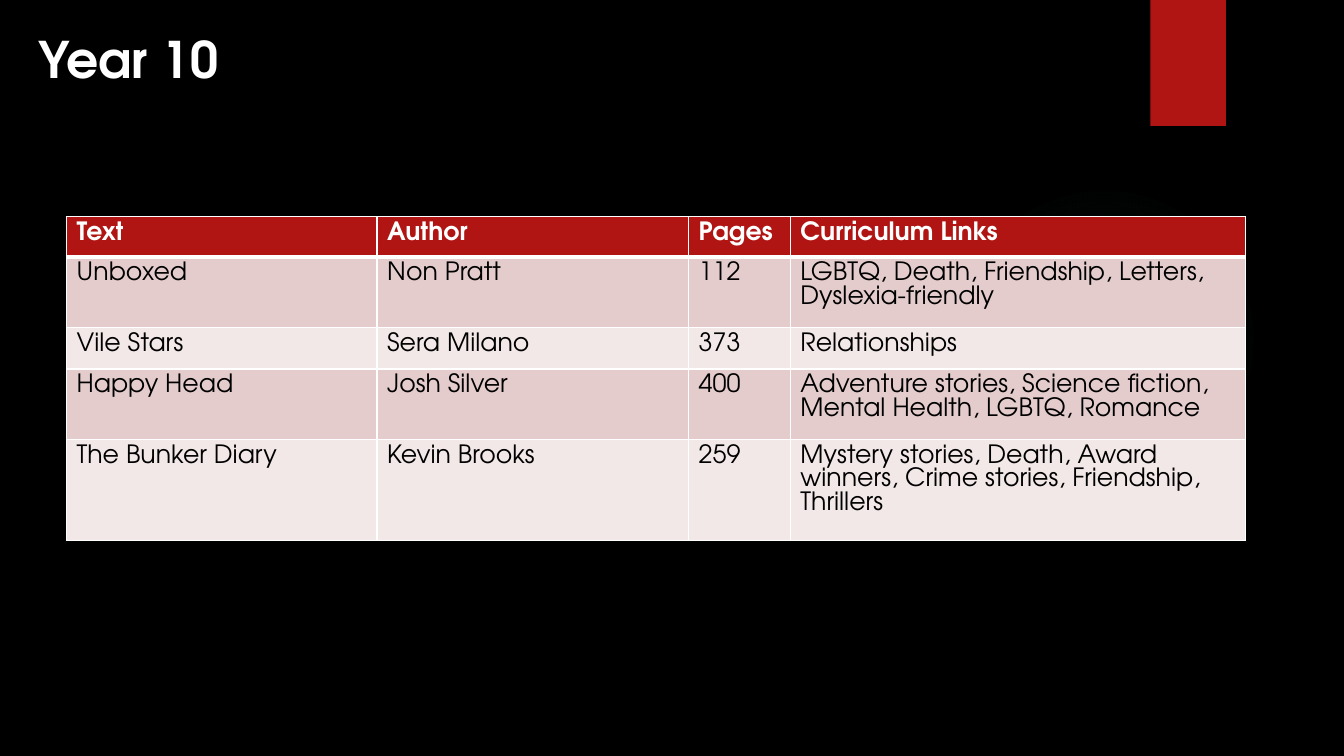
from lxml import etree
from pptx import Presentation
from pptx.dml.color import RGBColor
from pptx.enum import shapes, text
from pptx.oxml import ns
from pptx.util import Inches, Pt

BLACK = RGBColor(0x00, 0x00, 0x00)
WHITE = RGBColor(0xFF, 0xFF, 0xFF)
RED = RGBColor(0xB0, 0x15, 0x13)
ROSE = RGBColor(0xE4, 0xCC, 0xCC)
PALE = RGBColor(0xF2, 0xE8, 0xE7)
TEAL = RGBColor(0x50, 0xB9, 0xC1)
FONT = "TeX Gyre Adventor"

COL_WIDTHS = [3.08, 3.09, 1.01, 4.51]
ROW_HEIGHTS = [0.4, 0.7, 0.41, 0.7, 1.0]
BOOKS = [
    ("Text", "Author", "Pages", "Curriculum Links"),
    ("Unboxed", "Non Pratt", "112",
     "LGBTQ, Death, Friendship, Letters, Dyslexia-friendly"),
    ("Vile Stars", "Sera Milano", "373", "Relationships"),
    ("Happy Head", "Josh Silver", "400",
     "Adventure stories, Science fiction, Mental Health, LGBTQ, Romance"),
    ("The Bunker Diary", "Kevin Brooks", "259",
     "Mystery stories, Death, Award winners, Crime stories, Friendship, Thrillers"),
]


def add_run(p, words, size, color, bold):
    """Add one formatted run to a paragraph."""
    r = p.add_run()
    r.text = words
    r.font.name = FONT
    r.font.size = Pt(size)
    r.font.bold = bold
    r.font.color.rgb = color


def add_block(s, kind, x, y, w, h, color):
    """Add a filled preset shape without outline or shadow."""
    sp = s.shapes.add_shape(kind, Inches(x), Inches(y), Inches(w), Inches(h))
    sp.shadow.inherit = False
    sp.fill.solid()
    sp.fill.fore_color.rgb = color
    sp.line.fill.background()
    return sp


def add_glow(s, x, y, size):
    """Add a circle that fades out from a faint teal centre."""
    sp = add_block(s, shapes.MSO_SHAPE.OVAL, x, y, size, size, TEAL)
    stops = "".join(
        f'<a:gs pos="{pos}000"><a:srgbClr val="{TEAL}">'
        f'<a:alpha val="{alpha}000"/></a:srgbClr></a:gs>'
        for pos, alpha in [(0, 7), (36, 6), (69, 0), (100, 0)])
    grad = etree.fromstring(
        f'<a:gradFill {ns.nsdecls("a")}><a:gsLst>{stops}</a:gsLst>'
        '<a:path path="circle"><a:fillToRect l="50000" t="50000" '
        'r="50000" b="50000"/></a:path></a:gradFill>')
    solid = sp._element.spPr.find(ns.qn("a:solidFill"))
    solid.getparent().replace(solid, grad)


def add_title(s, words):
    """Add the slide heading."""
    box = s.shapes.add_textbox(Inches(0.28), Inches(0.23), Inches(5.51), Inches(0.71))
    tf = box.text_frame
    tf.word_wrap = True
    tf.auto_size = text.MSO_AUTO_SIZE.SHAPE_TO_FIT_TEXT
    add_run(tf.paragraphs[0], words, 36, WHITE, True)


def set_border(cell, side, width):
    """Draw one white border of a cell."""
    tc_pr = cell._tc.get_or_add_tcPr()
    ln = etree.SubElement(tc_pr, ns.qn(f"a:ln{side}"), w=str(Pt(width)))
    fill = etree.SubElement(ln, ns.qn("a:solidFill"))
    etree.SubElement(fill, ns.qn("a:srgbClr"), val=str(WHITE))


def fill_cell(cell, words, row):
    """Set the borders, fill and text of a cell according to its row."""
    header = row == 0
    widths = {"L": 1, "R": 1, "T": 3 if row == 1 else 1, "B": 3 if header else 1}
    for side, width in widths.items():
        set_border(cell, side, width)
    cell.fill.solid()
    cell.fill.fore_color.rgb = RED if header else (PALE, ROSE)[row % 2]
    p = cell.text_frame.paragraphs[0]
    add_run(p, words, 18, WHITE if header else BLACK, header)


def add_book_table(s):
    """Add the table of books."""
    frame = s.shapes.add_table(
        len(BOOKS), len(COL_WIDTHS), Inches(0.66), Inches(2.15),
        Inches(sum(COL_WIDTHS)), Inches(sum(ROW_HEIGHTS)))
    table = frame.table
    for col, width in zip(table.columns, COL_WIDTHS):
        col.width = Inches(width)
    for i, (height, book) in enumerate(zip(ROW_HEIGHTS, BOOKS)):
        table.rows[i].height = Inches(height)
        for j, words in enumerate(book):
            fill_cell(table.cell(i, j), words, i)


def main():
    """Build the slide and save it."""
    prs = Presentation()
    prs.slide_width = Inches(13.33)
    prs.slide_height = Inches(7.5)
    s = prs.slides.add_slide(prs.slide_layouts[6])
    s.background.fill.solid()
    s.background.fill.fore_color.rgb = BLACK
    add_glow(s, 9.41, 1.83, 3.08)
    add_block(s, shapes.MSO_SHAPE.RECTANGLE, 11.41, 0, 0.75, 1.25, RED)
    add_title(s, "Year 10")
    add_book_table(s)
    prs.save("out.pptx")


if __name__ == "__main__":
    main()
